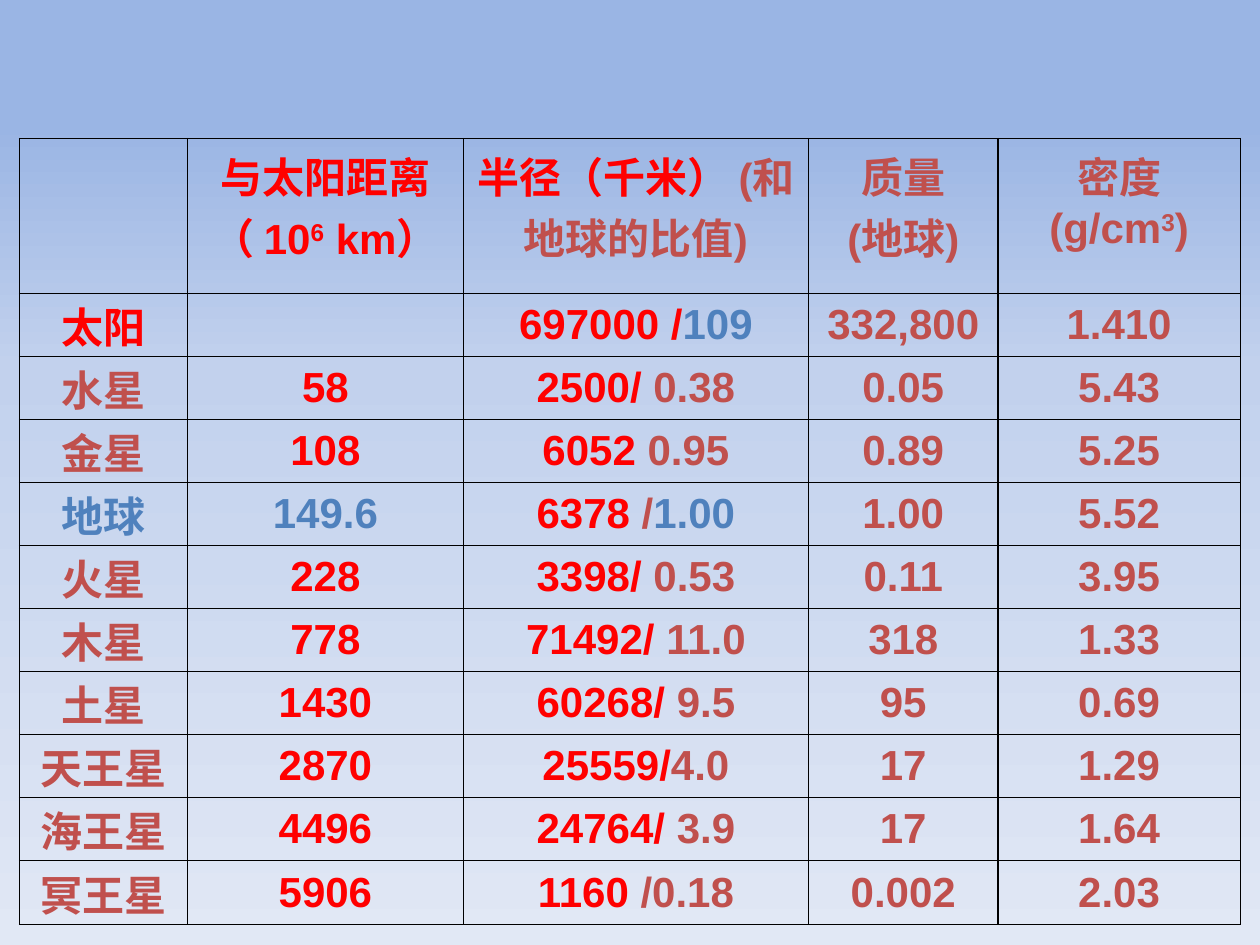
from copy import deepcopy

from lxml import etree
from pptx import Presentation
from pptx import util as u
from pptx.dml.color import RGBColor
from pptx.enum import text
from pptx.oxml import ns

COLORS = {
    "red": "FF0000",
    "brick": "C0504D",
    "blue": "4F81BD",
    "border": "000000",
}
BACKGROUND = [(0.13, "9AB5E4"), (0.39, "C2D1ED"), (1, "E1E8F5")]
COLUMN_WIDTHS = [3.39, 5.56, 6.96, 3.82, 4.88]
ROW_HEIGHTS = [3.12] + [1.27] * 9 + [1.3]

HEADERS = [
    [],
    [[("与太阳距离", "red")], [("（ 10", "red"), ("6", "red", True), (" km）", "red")]],
    [[("半径（千米） ", "red"), ("(和地球的比值)", "brick")]],
    [[("质量\n(地球)", "brick")]],
    [[("密度\n(g/cm", "brick"), ("3", "brick", True), (")", "brick")]],
]
BODIES = [
    ("太阳", "", [("697000 /", "red"), ("109", "blue")], "332,800", "1.410"),
    ("水星", "58", [("2500/ ", "red"), ("0.38", "brick")], "0.05", "5.43"),
    ("金星", "108", [("6052", "red"), (" 0.95", "brick")], "0.89", "5.25"),
    ("地球", "149.6", [("6378", "red"), (" /", "brick"), ("1.00", "blue")], "1.00", "5.52"),
    ("火星", "228", [("3398/", "red"), (" 0.53", "brick")], "0.11", "3.95"),
    ("木星", "778", [("71492/ ", "red"), ("11.0", "brick")], "318", "1.33"),
    ("土星", "1430", [("60268/ ", "red"), ("9.5", "brick")], "95", "0.69"),
    ("天王星", "2870", [("25559/", "red"), ("4.0", "brick")], "17", "1.29"),
    ("海王星", "4496", [("24764/", "red"), (" 3.9", "brick")], "17", "1.64"),
    ("冥王星", "5906", [("1160", "red"), (" /0.18", "brick")], "0.002", "2.03"),
]
NAME_COLORS = {"太阳": "red", "地球": "blue"}
DISTANCE_COLORS = {"地球": "blue"}


def paint_background(page):
    fill = page.background.fill
    fill.gradient()
    fill.gradient_angle = 270
    stop_list = page.element.find(".//" + ns.qn("a:gsLst"))
    stop_list.append(deepcopy(stop_list[-1]))
    for stop, (position, color) in zip(fill.gradient_stops, BACKGROUND):
        stop.position = position
        stop.color.rgb = RGBColor.from_string(color)


def add_span(para, words, color, raised=False):
    for index, line in enumerate(words.split("\n")):
        if index:
            para.add_line_break()
        span = para.add_run()
        span.text = line
        span.font.name = "Arial"
        span.font.size = u.Pt(24)
        span.font.bold = True
        span.font.color.rgb = RGBColor.from_string(COLORS[color])
        if raised:
            span.font._element.set("baseline", "30000")


def draw_borders(cell):
    properties = cell._tc.get_or_add_tcPr()
    for side in ("a:lnL", "a:lnR", "a:lnT", "a:lnB"):
        line = etree.SubElement(properties, ns.qn(side), w=str(u.Pt(0.75)))
        solid = etree.SubElement(line, ns.qn("a:solidFill"))
        etree.SubElement(solid, ns.qn("a:srgbClr"), val=COLORS["border"])


def fill_cell(cell, paragraphs, anchor):
    draw_borders(cell)
    cell.fill.background()
    cell.vertical_anchor = anchor
    frame = cell.text_frame
    for index, spans in enumerate(paragraphs):
        para = frame.add_paragraph() if index else frame.paragraphs[0]
        para.alignment = text.PP_ALIGN.CENTER
        for span in spans:
            add_span(para, *span)


def body_cells(name, distance, radius, mass, density):
    return [
        [[(name, NAME_COLORS.get(name, "brick"))]],
        [[(distance, DISTANCE_COLORS.get(name, "red"))]] if distance else [],
        [radius],
        [[(mass, "brick")]],
        [[(density, "brick")]],
    ]


def tighten_name(cell):
    cell.margin_top = u.Cm(0.03)
    cell.margin_bottom = 0


def add_planet_table(page):
    rows = [HEADERS] + [body_cells(*body) for body in BODIES]
    frame = page.shapes.add_table(
        len(rows), len(COLUMN_WIDTHS), u.Cm(0.39), u.Cm(2.79),
        u.Cm(sum(COLUMN_WIDTHS)), u.Cm(sum(ROW_HEIGHTS)),
    )
    table = frame.table
    table.first_row = False
    table.horz_banding = False
    for column, width in zip(table.columns, COLUMN_WIDTHS):
        column.width = u.Cm(width)
    for index, (row, height, contents) in enumerate(zip(table.rows, ROW_HEIGHTS, rows)):
        row.height = u.Cm(height)
        anchor = text.MSO_ANCHOR.MIDDLE if index else text.MSO_ANCHOR.TOP
        for cell, paragraphs in zip(row.cells, contents):
            fill_cell(cell, paragraphs, anchor)
        tighten_name(row.cells[0])


def main():
    deck = Presentation()
    deck.slide_width = u.Cm(25.4)
    deck.slide_height = u.Cm(19.05)
    page = deck.slides.add_slide(deck.slide_layouts[6])
    paint_background(page)
    add_planet_table(page)
    deck.save("out.pptx")


if __name__ == "__main__":
    main()
